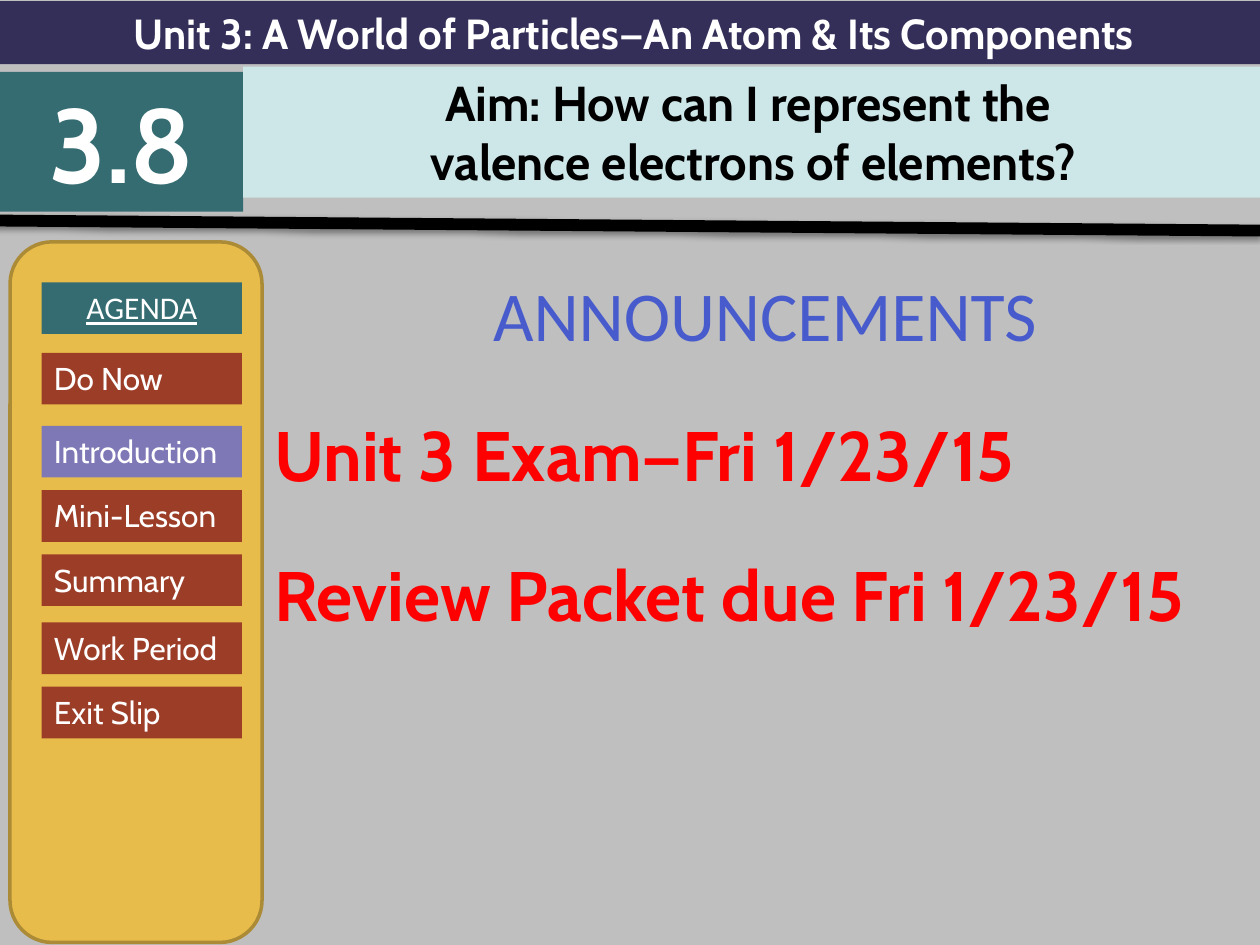
from lxml import etree
from pptx import Presentation
from pptx.dml.color import RGBColor
from pptx.enum.shapes import MSO_CONNECTOR, MSO_SHAPE
from pptx.enum.text import MSO_ANCHOR, PP_ALIGN
from pptx.oxml.ns import qn
from pptx.util import Inches, Pt

RECT, ROUNDED = MSO_SHAPE.RECTANGLE, MSO_SHAPE.ROUNDED_RECTANGLE
STRAIGHT = MSO_CONNECTOR.STRAIGHT
LEFT, CENTER = PP_ALIGN.LEFT, PP_ALIGN.CENTER
TOP = MSO_ANCHOR.TOP

THEME = {
    "color": {
        "background": "BFBFBF", "navy": "342F59", "teal": "346C71",
        "pale": "CDE6E8", "gold": "E8BC4A", "gold_edge": "AC8B37",
        "rust": "9C3D28", "violet": "7E78B7", "blue": "475BCD",
        "red": "FF0000", "white": "FFFFFF", "black": "000000",
    },
    "font": {"main": "Cabin", "plain": "Calibri"},
    "size": {"unit": 24, "number": 60, "aim": 28, "agenda": 18, "news": 40},
}

# lines, box (left, top, width, height), fill, text colour, size
HEADER = [
    (["Unit 3: A World of Particles—An Atom & Its Components"],
     (0, 0.01, 10.06, 0.5), "navy", "white", "unit"),
    (["3.8"], (0, 0.57, 1.93, 1.11), "teal", "white", "number"),
    (["Aim: How can I represent the ", "valence electrons of elements?"],
     (1.93, 0.53, 8.1, 1.04), "pale", "black", "aim"),
]

AGENDA_PANEL = (0.08, 1.92, 2, 5.56)
AGENDA_TITLE = "AGENDA"
AGENDA_TITLE_TOP = 2.24
AGENDA_LEFT, AGENDA_WIDTH, AGENDA_HEIGHT = 0.33, 1.59, 0.41
CURRENT_STEP = "Introduction"
AGENDA_STEPS = [
    ("Do Now", 2.8), ("Introduction", 3.38), ("Mini-Lesson", 3.89),
    ("Summary", 4.4), ("Work Period", 4.94), ("Exit Slip", 5.45),
]

NEWS_BOX = (2.08, 2.04, 7.98, 5.46)
NEWS_TITLE = "ANNOUNCEMENTS"
NEWS_ITEMS = ["Unit 3 Exam—Fri 1/23/15", "Review Packet due Fri 1/23/15"]

DIVIDER = (-0.05, 1.75, 10, 1.83)


def color(name):
    return RGBColor.from_string(THEME["color"][name])


def inches(values):
    return [Inches(value) for value in values]


def add_block(shapes, kind, box, fill, edge=None):
    block = shapes.add_shape(kind, *inches(box))
    block.shadow.inherit = False
    block.fill.solid()
    block.fill.fore_color.rgb = color(fill)
    if edge:
        block.line.color.rgb = color(edge)
        block.line.width = Pt(2)
    else:
        block.line.fill.background()
    return block


def write(paragraph, text, size, ink, font="main", align=LEFT,
          bold=False, underline=False):
    paragraph.alignment = align
    run = paragraph.add_run()
    run.text = text
    run.font.name = THEME["font"][font]
    run.font.size = Pt(THEME["size"][size])
    run.font.color.rgb = color(ink)
    run.font.bold = bold
    run.font.underline = underline


def paragraphs(frame, count):
    """Set up the frame and return its first paragraph plus the rest needed."""
    frame.word_wrap = True
    frame.vertical_anchor = TOP
    return [frame.paragraphs[0]] + [frame.add_paragraph()
                                    for _ in range(count - 1)]


def add_announcements(shapes):
    frame = shapes.add_textbox(*inches(NEWS_BOX)).text_frame
    title, *items = paragraphs(frame, 1 + len(NEWS_ITEMS))
    write(title, NEWS_TITLE, "news", "blue", "plain", CENTER)
    title.line_spacing = 1.1
    for paragraph, text in zip(items, NEWS_ITEMS):
        write(paragraph, text, "news", "red", bold=True)
        paragraph.line_spacing = 1.5
    for paragraph in (title, *items):
        paragraph.space_before = Pt(0.2 * THEME["size"]["news"])


def add_header(shapes):
    for lines, box, fill, ink, size in HEADER:
        frame = add_block(shapes, RECT, box, fill).text_frame
        for paragraph, text in zip(paragraphs(frame, len(lines)), lines):
            write(paragraph, text, size, ink, align=CENTER, bold=True)


def add_divider(shapes):
    divider = shapes.add_connector(STRAIGHT, *inches(DIVIDER))
    divider.line.color.rgb = color("black")
    divider.line.width = Pt(6.75)
    effects = etree.SubElement(divider._element.spPr, qn("a:effectLst"))
    shadow = etree.SubElement(
        effects, qn("a:outerShdw"), blurRad=str(Pt(3.1)), dist=str(Pt(1.6)),
        dir="5400000", rotWithShape="0")
    shade = etree.SubElement(shadow, qn("a:srgbClr"),
                             val=THEME["color"]["black"])
    etree.SubElement(shade, qn("a:alpha"), val="38000")


def add_agenda(shapes):
    agenda = shapes.add_group_shape().shapes
    add_block(agenda, ROUNDED, AGENDA_PANEL, "gold", "gold_edge")

    def add_entry(text, top, fill, **style):
        box = (AGENDA_LEFT, top, AGENDA_WIDTH, AGENDA_HEIGHT)
        frame = add_block(agenda, RECT, box, fill).text_frame
        write(paragraphs(frame, 1)[0], text, "agenda", "white", **style)

    add_entry(AGENDA_TITLE, AGENDA_TITLE_TOP, "teal",
              font="plain", align=CENTER, underline=True)
    for step, top in AGENDA_STEPS:
        add_entry(step, top, "violet" if step == CURRENT_STEP else "rust")


def main():
    deck = Presentation()
    deck.slide_width, deck.slide_height = Inches(10), Inches(7.5)
    slide = deck.slides.add_slide(deck.slide_layouts[6])
    slide.background.fill.solid()
    slide.background.fill.fore_color.rgb = color("background")
    for add_part in (add_announcements, add_header, add_divider, add_agenda):
        add_part(slide.shapes)
    deck.save("out.pptx")


if __name__ == "__main__":
    main()
